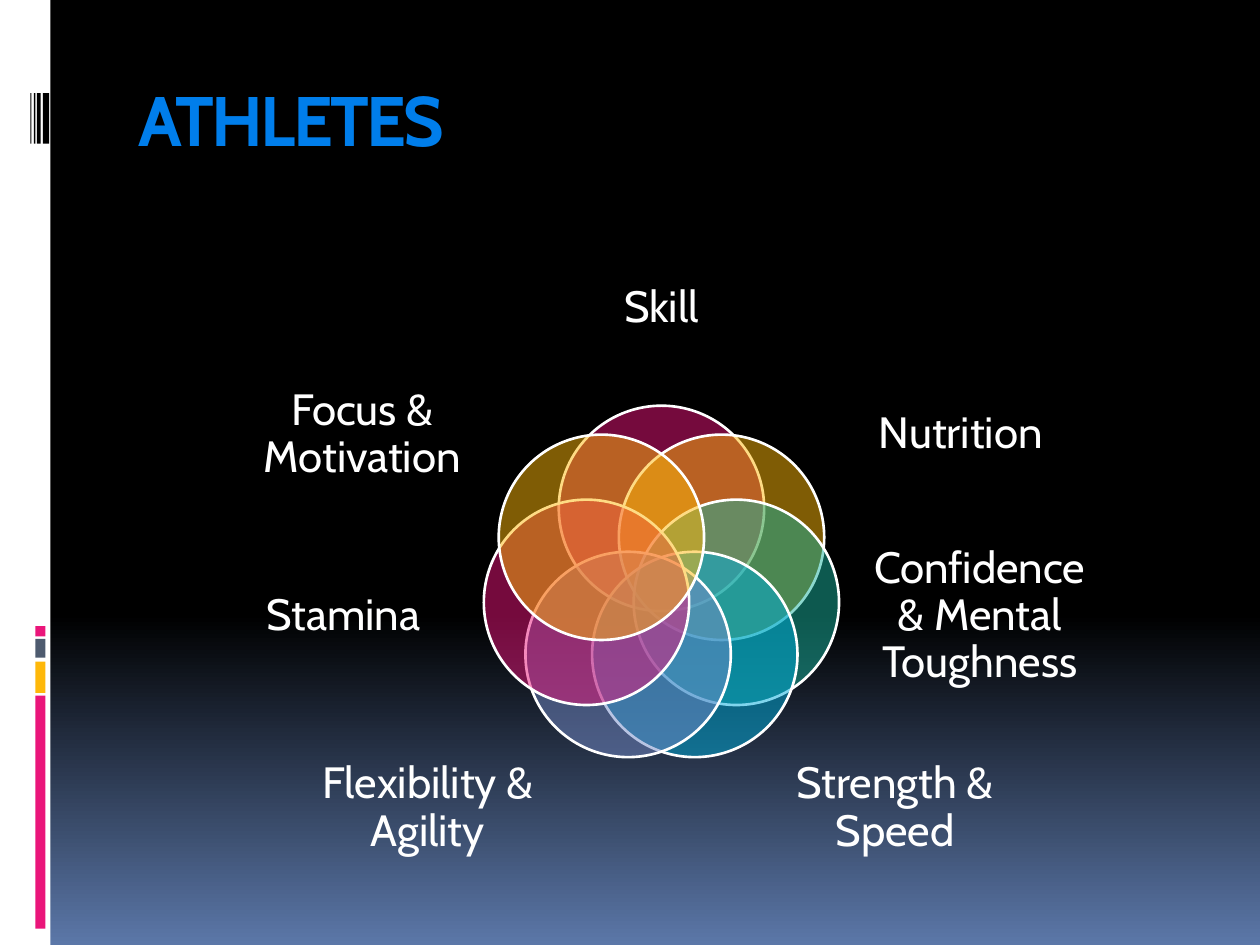
import copy
import math
from collections import namedtuple
from dataclasses import dataclass

from lxml import etree
from pptx import Presentation
from pptx.dml.color import RGBColor
from pptx.enum.shapes import MSO_SHAPE
from pptx.enum.text import MSO_ANCHOR, PP_ALIGN
from pptx.oxml.ns import qn
from pptx.util import Inches, Pt

RECT, OVAL = MSO_SHAPE.RECTANGLE, MSO_SHAPE.OVAL
TOP, MIDDLE = MSO_ANCHOR.TOP, MSO_ANCHOR.MIDDLE
LEFT, CENTER = PP_ALIGN.LEFT, PP_ALIGN.CENTER

# Grid of 100 columns by 75 rows; all boxes are given in these units
SLIDE_W, SLIDE_H = Inches(10), Inches(7.5)
COL, ROW = SLIDE_W / 100, SLIDE_H / 75
Box = namedtuple("Box", "left top width height")


@dataclass(frozen=True)
class Theme:
    font: str = "Cabin"
    title_size: int = 40
    label_size: int = 25
    outline: float = 1.5
    title: str = "007EEB"
    white: str = "FFFFFF"
    black: str = "000000"
    sky: str = "5B77A8"
    pink: str = "EA157A"
    gold: str = "FEB80A"
    slate: str = "4E5B6F"
    green: str = "1AB39F"
    cyan: str = "00ADDC"
    blue: str = "738AC8"


THEME = Theme()

# Clockwise from the top
PETALS = [
    ("Skill", THEME.pink),
    ("Nutrition", THEME.gold),
    ("Confidence & Mental Toughness", THEME.green),
    ("Strength & Speed", THEME.cyan),
    ("Flexibility & Agility", THEME.blue),
    ("Stamina", THEME.pink),
    ("Focus & Motivation", THEME.gold),
]
# Label centre from the hub (columns, rows), then label width and height
LABEL_TIERS = [
    (0, -22, 18.7, 10),
    (23.75, -11.95, 17.7, 11),
    (25.25, 2.45, 17.3, 11.8),
    (18.55, 17.7, 18.7, 10.7),
]


def emu(box):
    return (round(box.left * COL), round(box.top * ROW),
            round(box.width * COL), round(box.height * ROW))


def centered(x, y, width, height):
    return Box(x - width / 2, y - height / 2, width, height)


def add_shape(shapes, kind, box, color):
    shape = shapes.add_shape(kind, *emu(box))
    shape.shadow.inherit = False
    shape.fill.solid()
    shape.fill.fore_color.rgb = RGBColor.from_string(color)
    shape.line.fill.background()
    return shape


def add_text(shapes, box, text, size, color, align, anchor):
    holder = shapes.add_textbox(*emu(box))
    frame = holder.text_frame
    frame.word_wrap = True
    frame.vertical_anchor = anchor
    frame.text = text
    para = frame.paragraphs[0]
    para.alignment = align
    span = para.runs[0]
    span.font.name = THEME.font
    span.font.size = Pt(size)
    span.font.color.rgb = RGBColor.from_string(color)
    return frame


def paint_background(page):
    fill = page.background.fill
    fill.gradient()
    fill.gradient_angle = 270
    # A third stop keeps the upper part plain black
    stop_list = next(page.element.iter(qn("a:gsLst")))
    stop_list.insert(1, copy.deepcopy(stop_list[0]))
    stops = [(0, THEME.black), (0.65, THEME.black), (1, THEME.sky)]
    for stop, (position, color) in zip(fill.gradient_stops, stops):
        stop.position = position
        stop.color.rgb = RGBColor.from_string(color)


def draw_sidebar(page, box):
    add_shape(page.shapes, RECT, box, THEME.white)
    # Stacked colour blocks: top, height, colour
    blocks = [(55.2, 18.5, THEME.pink), (52.5, 2.5, THEME.gold),
              (50.7, 1.5, THEME.slate), (49.7, 0.8, THEME.pink)]
    for top, height, color in blocks:
        block = Box(box.left + 2.8, box.top + top, 0.8, height)
        add_shape(page.shapes, RECT, block, color)
    # Barcode stripes: left, width
    for left, width in [(3.4, 0.5), (2.93, 0.3), (2.7, 0.12), (2.4, 0.1)]:
        stripe = Box(box.left + left, box.top + 7.4, width, 4)
        add_shape(page.shapes, RECT, stripe, THEME.black)


def draw_title(page, box, text):
    frame = add_text(page.shapes, box, text, THEME.title_size,
                     THEME.title, LEFT, TOP)
    font = frame.paragraphs[0].runs[0].font
    font.bold = True
    font._element.set("spc", "-150")


def draw_petal(shapes, box, color):
    petal = add_shape(shapes, OVAL, box, color)
    petal.line.color.rgb = RGBColor.from_string(THEME.white)
    petal.line.width = Pt(THEME.outline)
    # Half transparent fill
    fill_color = petal.element.spPr.find(qn("a:solidFill"))[0]
    etree.SubElement(fill_color, qn("a:alpha")).set("val", "50000")


def draw_label(shapes, box, text):
    frame = add_text(shapes, box, text, THEME.label_size,
                     THEME.white, CENTER, MIDDLE)
    frame.margin_left = frame.margin_right = 0
    frame.margin_top = frame.margin_bottom = 0
    frame.paragraphs[0].line_spacing = 0.9


def draw_flower(page, box):
    shapes = page.shapes.add_group_shape().shapes
    hub_x = box.left + box.width / 2
    hub_y = box.top + 26.95
    radius, diameter = 6.1, 16.3
    count = len(PETALS)
    for index, (text, color) in enumerate(PETALS):
        angle = 2 * math.pi * index / count
        draw_petal(shapes, centered(hub_x + radius * math.sin(angle),
                                    hub_y - radius * math.cos(angle),
                                    diameter, diameter), color)
        # Labels on the left mirror those on the right
        side = 1 if index <= count // 2 else -1
        dx, dy, width, height = LABEL_TIERS[min(index, count - index)]
        draw_label(shapes, centered(hub_x + side * dx, hub_y + dy,
                                    width, height), text)


def main():
    deck = Presentation()
    deck.slide_width, deck.slide_height = SLIDE_W, SLIDE_H
    page = deck.slides.add_slide(deck.slide_layouts[6])
    paint_background(page)
    draw_sidebar(page, Box(0, 0, 4, 75))
    draw_title(page, Box(10, 5.6, 85, 10), "ATHLETES")
    draw_flower(page, Box(18.5, 19.5, 68, 50))
    deck.save("out.pptx")


if __name__ == "__main__":
    main()
